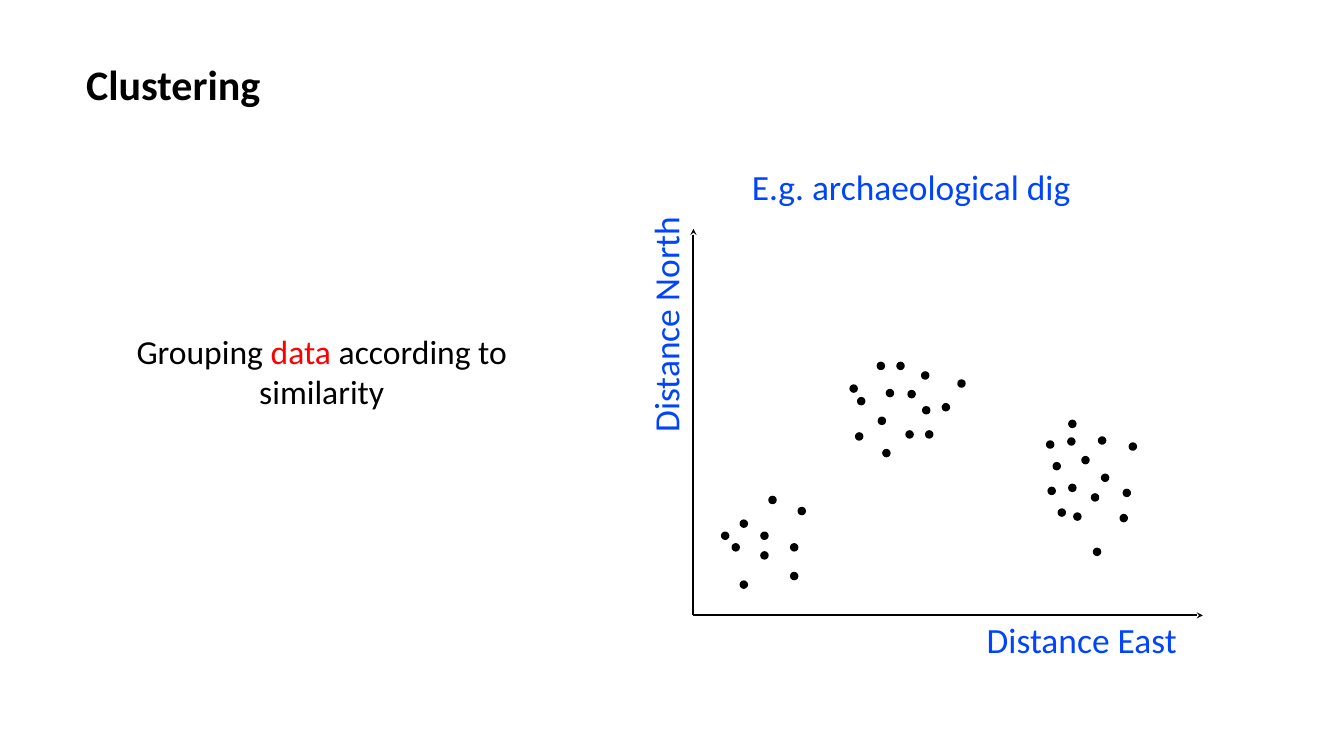
from lxml.etree import SubElement
from pptx import Presentation
from pptx.dml.color import RGBColor
from pptx.enum.shapes import MSO_CONNECTOR, MSO_SHAPE
from pptx.enum.text import MSO_ANCHOR, MSO_AUTO_SIZE, PP_ALIGN
from pptx.oxml.ns import qn
from pptx.util import Inches, Pt

BLACK = RGBColor(0x00, 0x00, 0x00)
RED = RGBColor(0xFF, 0x00, 0x00)
BLUE = RGBColor(0x00, 0x44, 0xFE)
FONT = "Calibri"
WIDTH, HEIGHT = 26.67, 15
DOT_SIZE = 0.14

# Content: text runs, chart labels and the top left corner of every find
TITLE = [("Clustering", BLACK)]
DEFINITION = [("Grouping ", BLACK), ("data ", RED), ("according to similarity", BLACK)]

LABELS = [  # text, left, top, width, rotation
    ("Distance East", 19.58, 12.2, WIDTH - 19.58, 0),
    ("Distance North", 10.52, 5.42, 5.36, 270),
    ("E.g. archaeological dig", 14.92, 3.22, WIDTH - 14.92, 0),
]

ORIGIN = (13.76, 12.21)
AXIS_TIPS = [(ORIGIN[0], 4.54), (23.87, ORIGIN[1])]

CLUSTERS = {
    "north": [
        (17.41, 7.19), (18.02, 7.75), (16.87, 7.64), (17.02, 7.89), (17.59, 7.73),
        (17.8, 7.19), (17.43, 8.28), (17.98, 8.55), (18.31, 8.07), (18.29, 7.38),
        (16.98, 8.59), (17.52, 8.92), (18.7, 8.01), (18.37, 8.55), (19.01, 7.54),
    ],
    "south-west": [
        (14.32, 10.56), (14.69, 10.32), (14.53, 10.79), (15.1, 10.56), (15.1, 10.95),
        (15.69, 10.79), (14.69, 11.53), (15.69, 11.36), (15.26, 9.85), (15.84, 10.07),
    ],
    "east": [
        (21.21, 8.34), (21.19, 8.69), (20.77, 8.75), (21.8, 8.67), (21.47, 9.06),
        (20.9, 9.18), (21.86, 9.41), (21.21, 9.61), (20.8, 9.67), (21, 10.1),
        (21.66, 9.8), (22.29, 9.71), (21.31, 10.18), (22.23, 10.21), (22.41, 8.79),
        (21.7, 10.88),
    ],
}


def place(shape, left, top, width, height):
    shape.left, shape.top = Inches(left), Inches(top)
    shape.width, shape.height = Inches(width), Inches(height)


def write(shape, runs, size, alignment=PP_ALIGN.LEFT, bold=False):
    frame = shape.text_frame
    frame.word_wrap = True
    frame.auto_size = MSO_AUTO_SIZE.NONE
    frame.vertical_anchor = MSO_ANCHOR.MIDDLE
    frame.margin_left = frame.margin_right = frame.margin_top = frame.margin_bottom = 0
    paragraph = frame.paragraphs[0]
    paragraph.alignment = alignment
    paragraph.space_before = Pt(0)
    for text, color in runs:
        run = paragraph.add_run()
        run.text = text
        run.font.name, run.font.size, run.font.bold = FONT, Pt(size), bold
        run.font.color.rgb = color


def remove_bullet(paragraph):
    properties = paragraph._p.get_or_add_pPr()
    properties.set("marL", "0")
    properties.set("indent", "0")
    SubElement(properties, qn("a:buNone"))


def add_axis(slide, tip):
    axis = slide.shapes.add_connector(
        MSO_CONNECTOR.STRAIGHT, *(Inches(value) for value in (*tip, *ORIGIN)))
    axis.line.color.rgb = BLACK
    axis.line.width = Pt(3)
    SubElement(axis.line._get_or_add_ln(), qn("a:headEnd"), type="stealth")
    SubElement(axis._element.spPr, qn("a:effectLst"))


def add_dot(slide, left, top):
    dot = slide.shapes.add_shape(
        MSO_SHAPE.OVAL, *(Inches(value) for value in (left, top, DOT_SIZE, DOT_SIZE)))
    dot.shadow.inherit = False
    dot.fill.solid()
    dot.fill.fore_color.rgb = BLACK
    dot.line.color.rgb = BLACK
    dot.line.width = Pt(2)


def main():
    presentation = Presentation()
    presentation.slide_width, presentation.slide_height = Inches(WIDTH), Inches(HEIGHT)
    slide = presentation.slides.add_slide(presentation.slide_layouts[1])

    # Title and definition
    title, body = slide.shapes.title, slide.placeholders[1]
    place(title, 1.71, 1.11, 19.04, 1.11)
    write(title, TITLE, 60, bold=True)
    place(body, 1.57, 6.42, 9.63, 1.88)
    remove_bullet(body.text_frame.paragraphs[0])
    write(body, DEFINITION, 48, PP_ALIGN.CENTER)

    # Axes and their labels
    for tip in AXIS_TIPS:
        add_axis(slide, tip)
    for text, left, top, width, rotation in LABELS:
        label = slide.shapes.add_textbox(0, 0, 0, 0)
        place(label, left, top, width, 0.96)
        label.rotation = rotation
        write(label, [(text, BLUE)], 50.6)

    # Finds
    for cluster in CLUSTERS.values():
        for left, top in cluster:
            add_dot(slide, left, top)

    presentation.save("out.pptx")


if __name__ == "__main__":
    main()
